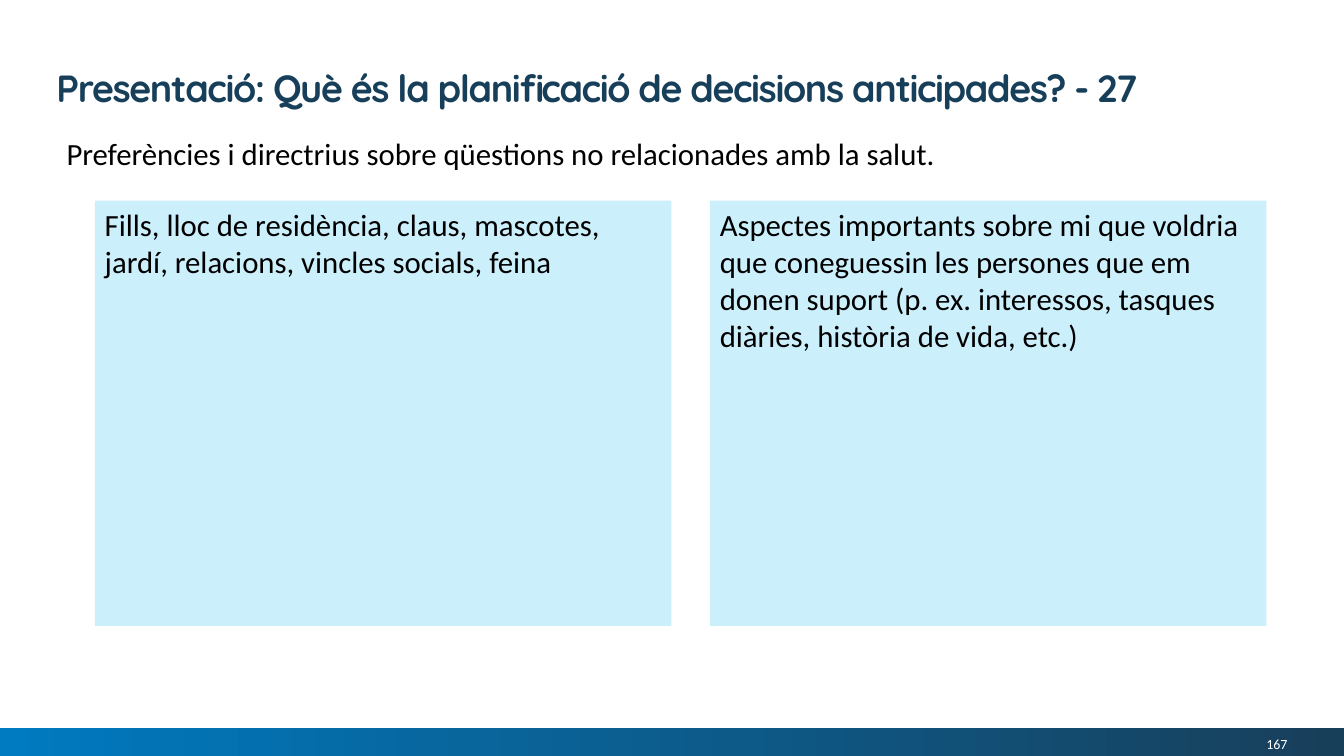
import pptx
import pptx.util
import pptx.dml.color
import pptx.enum.dml
import pptx.enum.shapes
import pptx.enum.text
import pptx.oxml
import pptx.oxml.ns
from dataclasses import dataclass

Inches = pptx.util.Inches
Pt = pptx.util.Pt
Align = pptx.enum.text.PP_ALIGN
Anchor = pptx.enum.text.MSO_ANCHOR


@dataclass(frozen=True)
class Theme:
    navy: str = "183F5A"
    blue: str = "007AC0"
    sky: str = "00B0F0"
    ink: str = "000000"
    white: str = "FFFFFF"
    head: str = "Quicksand"
    text: str = "Calibri"
    large: int = 27
    main: int = 22
    small: int = 10


THEME = Theme()


def rgb(code):
    return pptx.dml.color.RGBColor.from_string(code)


def place(shape, left, top, width, height):
    shape.left, shape.top = Inches(left), Inches(top)
    shape.width, shape.height = Inches(width), Inches(height)


def write(shape, text, size, color, face=THEME.text, align=Align.LEFT, anchor=Anchor.TOP):
    """Fill a shape with one formatted paragraph and return the paragraph."""
    frame = shape.text_frame
    frame.text = text
    frame.word_wrap = True
    frame.auto_size = pptx.enum.text.MSO_AUTO_SIZE.NONE
    frame.vertical_anchor = anchor
    para = frame.paragraphs[0]
    para.alignment = align
    para.space_before = Pt(0)
    font = para.runs[0].font
    font.name, font.size = face, Pt(size)
    font.color.rgb = rgb(color)
    return para


def add_rect(slide, left, top, width, height):
    rect = slide.shapes.add_shape(
        pptx.enum.shapes.MSO_SHAPE.RECTANGLE,
        Inches(left), Inches(top), Inches(width), Inches(height))
    rect.shadow.inherit = False
    rect.line.fill.background()
    return rect


def add_panel(slide, left, width, text):
    panel = add_rect(slide, left, 1.99, width, 4.22)
    panel.fill.solid()
    panel.fill.fore_color.rgb = rgb(THEME.sky)
    color = panel.fill._xPr.find(".//" + pptx.oxml.ns.qn("a:srgbClr"))
    color.append(pptx.oxml.parse_xml(
        f'<a:alpha {pptx.oxml.ns.nsdecls("a")} val="20000"/>'))
    write(panel, text, THEME.main, THEME.ink)


def add_footer(slide, number):
    band = add_rect(slide, 0, 7.22, 13.33, 0.28)
    band.fill.gradient()
    band.fill.gradient_angle = 0
    for stop, place_at, code in zip(
            band.fill.gradient_stops, (0, 1), (THEME.blue, THEME.navy)):
        stop.position = place_at
        stop.color.rgb = rgb(code)
    box = slide.shapes.add_textbox(
        Inches(10.97), Inches(7.26), Inches(1.8), Inches(0.24))
    frame = box.text_frame
    frame.margin_left = frame.margin_right = 0
    frame.margin_top = frame.margin_bottom = 0
    write(box, number, THEME.small, THEME.white,
          align=Align.RIGHT, anchor=Anchor.MIDDLE)


def set_title(slide, text):
    title = slide.shapes.title
    place(title, 0.46, 0.55, 12.41, 0.43)
    para = write(title, text, THEME.large, THEME.navy, THEME.head)
    title.text_frame.margin_top = Inches(0.08)
    para.line_spacing = Pt(33)
    font = para.runs[0].font
    font.bold = True
    font._rPr.set("spc", "-100")


def set_body(slide, text):
    body = slide.placeholders[1]
    place(body, 0.56, 1.29, 12.22, 4.92)
    para = write(body, text, THEME.main, THEME.ink)
    para.space_after = Pt(12)
    props = para._p.get_or_add_pPr()
    props.set("marL", "0")
    props.set("indent", "0")
    props.append(pptx.oxml.parse_xml(
        f'<a:buNone {pptx.oxml.ns.nsdecls("a")}/>'))


def main():
    deck = pptx.Presentation()
    deck.slide_width, deck.slide_height = Inches(13.33), Inches(7.5)
    slide = deck.slides.add_slide(deck.slide_layouts[1])
    set_title(slide, "Presentació: Què és la planificació de decisions anticipades? - 27")
    set_body(slide, "Preferències i directrius sobre qüestions no relacionades amb la salut.")
    add_panel(slide, 0.94, 5.72,
              "Fills, lloc de residència, claus, mascotes, jardí, relacions, "
              "vincles socials, feina")
    add_panel(slide, 7.04, 5.52,
              "Aspectes importants sobre mi que voldria que coneguessin les "
              "persones que em donen suport (p. ex. interessos, tasques diàries, "
              "història de vida, etc.)")
    add_footer(slide, "167")
    deck.save("out.pptx")


if __name__ == "__main__":
    main()
